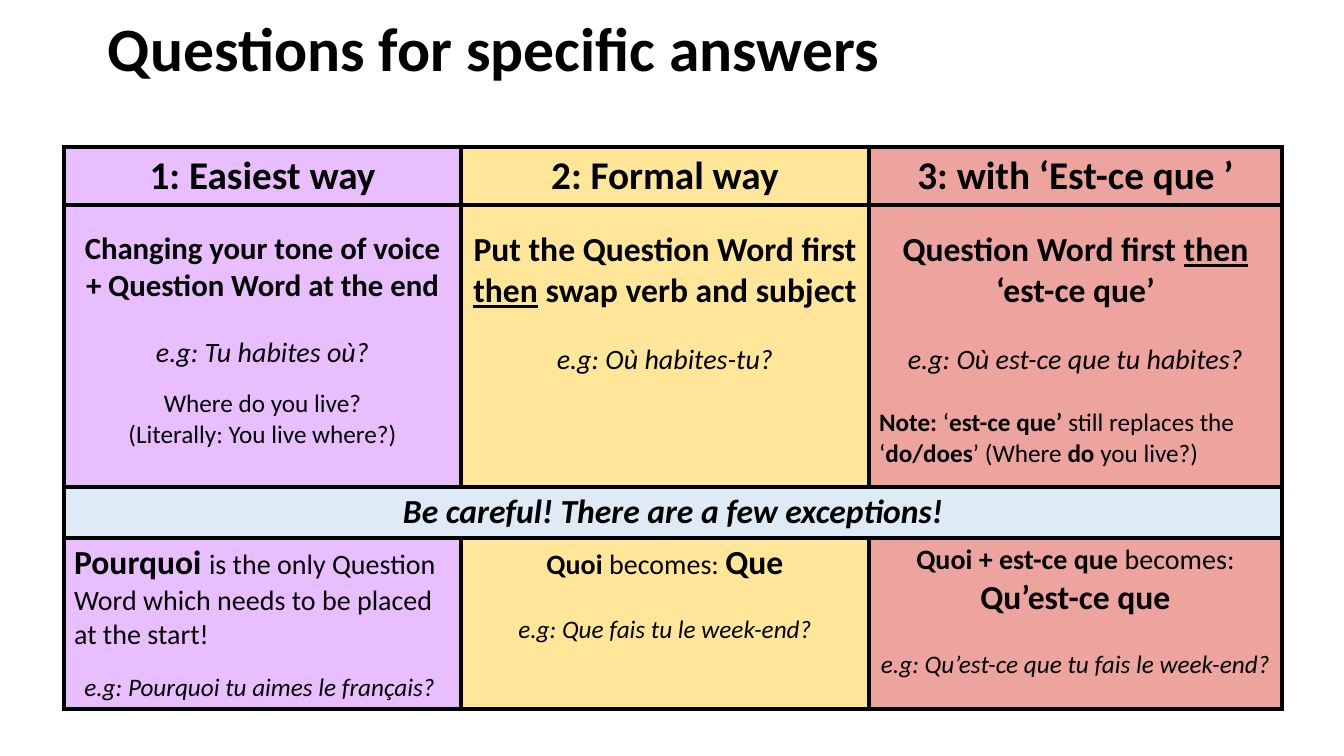
from dataclasses import dataclass
from typing import Optional

from lxml import etree
from pptx import Presentation
from pptx import util as u
from pptx.dml.color import RGBColor
from pptx.enum import text
from pptx.oxml.ns import qn

EMU_PER_PX = 914400 / 100.8
FONT = "Calibri"
BLACK = "000000"
PURPLE, YELLOW, RED, BLUE = "E9BEFF", "FFE699", "EDA49F", "DEEBF7"
COLUMN_FILLS = [PURPLE, YELLOW, RED]
COLUMN_WIDTHS = [397, 408, 413]
ROW_HEIGHTS = [58, 282, 51, 171]
EXCEPTIONS_ROW = 2
CELL_MARGIN = 5
RULE_TOP_MARGIN = 25


@dataclass
class Span:
    """A stretch of text; None keeps the setting of its paragraph."""
    text: str
    bold: Optional[bool] = None
    underline: Optional[bool] = None
    size: Optional[int] = None


@dataclass
class Para:
    spans: list[Span]
    size: int
    bold: bool = False
    italic: bool = False
    before: float = 0
    centred: bool = True


@dataclass
class Cell:
    row: int
    column: int
    fill: str
    paras: list[Para]
    top: int = CELL_MARGIN


def heading(words: str) -> list[Para]:
    return [Para([Span(words)], 28, bold=True)]


def example(words: str, size: int, before: float = 22) -> Para:
    return Para([Span(words)], size, italic=True, before=before)


HEADINGS = [
    heading("1: Easiest way"),
    heading("2: Formal way"),
    heading("3: with ‘Est-ce que ’"),
]
RULES = [
    [
        Para([Span("Changing your tone of voice + Question Word at the end")], 22, bold=True),
        example("e.g: Tu habites où?", 20),
        Para([Span("Where do you live?")], 18, before=13.4),
        Para([Span("(Literally: You live where?)")], 18),
    ],
    [
        Para([Span("Put the Question Word first "), Span("then", underline=True),
              Span(" swap verb and subject")], 24, bold=True),
        example("e.g: Où habites-tu?", 20),
    ],
    [
        Para([Span("Question Word first "), Span("then", underline=True),
              Span(" ‘est-ce que’")], 24, bold=True),
        example("e.g: Où est-ce que tu habites?", 20),
        Para([Span("Note: ", bold=True), Span("‘"), Span("est-ce que’ ", bold=True),
              Span("still replaces the ‘"), Span("do/does", bold=True),
              Span("’ (Where "), Span("do", bold=True), Span(" you live?)")],
             18, before=22, centred=False),
    ],
]
WARNING = [Para([Span("Be careful! There are a few exceptions!")], 24, bold=True, italic=True)]
EXCEPTIONS = [
    [
        Para([Span("Pourquoi ", bold=True, size=24),
              Span("is the only Question Word which needs to be placed at the start!")],
             20, centred=False),
        example("e.g: Pourquoi tu aimes le français? ", 18, before=14.6),
    ],
    [
        Para([Span("Quoi", bold=True), Span(" becomes: "),
              Span("Que", bold=True, size=24)], 20),
        example("e.g: Que fais tu le week-end?", 18),
    ],
    [
        Para([Span("Quoi + est-ce que ", bold=True), Span("becomes: "),
              Span("Qu’est-ce que", bold=True, size=24)], 20),
        example("e.g: Qu’est-ce que tu fais le week-end?", 18),
    ],
]


def px(length: int) -> u.Emu:
    return u.Emu(round(length * EMU_PER_PX))


def colour(value: str) -> RGBColor:
    return RGBColor.from_string(value)


def write(frame, paras: list[Para]) -> None:
    for index, content in enumerate(paras):
        para = frame.paragraphs[0] if index == 0 else frame.add_paragraph()
        para.alignment = text.PP_ALIGN.CENTER if content.centred else text.PP_ALIGN.LEFT
        if content.before:
            para.space_before = u.Pt(content.before)
        para.font.name = FONT
        para.font.size = u.Pt(content.size)
        para.font.bold = content.bold
        para.font.italic = content.italic
        para.font.color.rgb = colour(BLACK)
        for part in content.spans:
            span = para.add_run()
            span.text = part.text
            span.font.bold = part.bold
            span.font.underline = part.underline
            if part.size:
                span.font.size = u.Pt(part.size)


def add_borders(cell, points: int) -> None:
    properties = cell._tc.get_or_add_tcPr()
    for side in ("a:lnL", "a:lnR", "a:lnT", "a:lnB"):
        line = etree.SubElement(properties, qn(side), w=str(u.Pt(points)))
        fill = etree.SubElement(line, qn("a:solidFill"))
        etree.SubElement(fill, qn("a:srgbClr"), val=BLACK)


def add_title(page) -> None:
    box = page.shapes.add_textbox(px(98), px(0), px(1159), px(103))
    frame = box.text_frame
    frame.word_wrap = True
    frame.vertical_anchor = text.MSO_ANCHOR.MIDDLE
    write(frame, [Para([Span("Questions for specific answers")], 44, bold=True, centred=False)])
    frame.paragraphs[0].line_spacing = 0.9


def add_question_table(page) -> None:
    table = page.shapes.add_table(
        len(ROW_HEIGHTS), len(COLUMN_WIDTHS), px(64), px(147),
        px(sum(COLUMN_WIDTHS)), px(sum(ROW_HEIGHTS))).table
    table.first_row = table.horz_banding = False
    for column, width in zip(table.columns, COLUMN_WIDTHS):
        column.width = px(width)
    for row, height in zip(table.rows, ROW_HEIGHTS):
        row.height = px(height)
    for cell in table.iter_cells():
        add_borders(cell, 3)
    table.cell(EXCEPTIONS_ROW, 0).merge(table.cell(EXCEPTIONS_ROW, len(COLUMN_WIDTHS) - 1))

    contents = [Cell(EXCEPTIONS_ROW, 0, BLUE, WARNING)]
    for column, fill in enumerate(COLUMN_FILLS):
        contents += [
            Cell(0, column, fill, HEADINGS[column]),
            Cell(1, column, fill, RULES[column], RULE_TOP_MARGIN),
            Cell(3, column, fill, EXCEPTIONS[column]),
        ]
    for content in contents:
        cell = table.cell(content.row, content.column)
        cell.fill.solid()
        cell.fill.fore_color.rgb = colour(content.fill)
        cell.margin_top = px(content.top)
        write(cell.text_frame, content.paras)


def main() -> None:
    deck = Presentation()
    deck.slide_width, deck.slide_height = px(1344), px(756)
    page = deck.slides.add_slide(deck.slide_layouts[6])
    add_question_table(page)
    add_title(page)
    deck.save("out.pptx")


if __name__ == "__main__":
    main()
